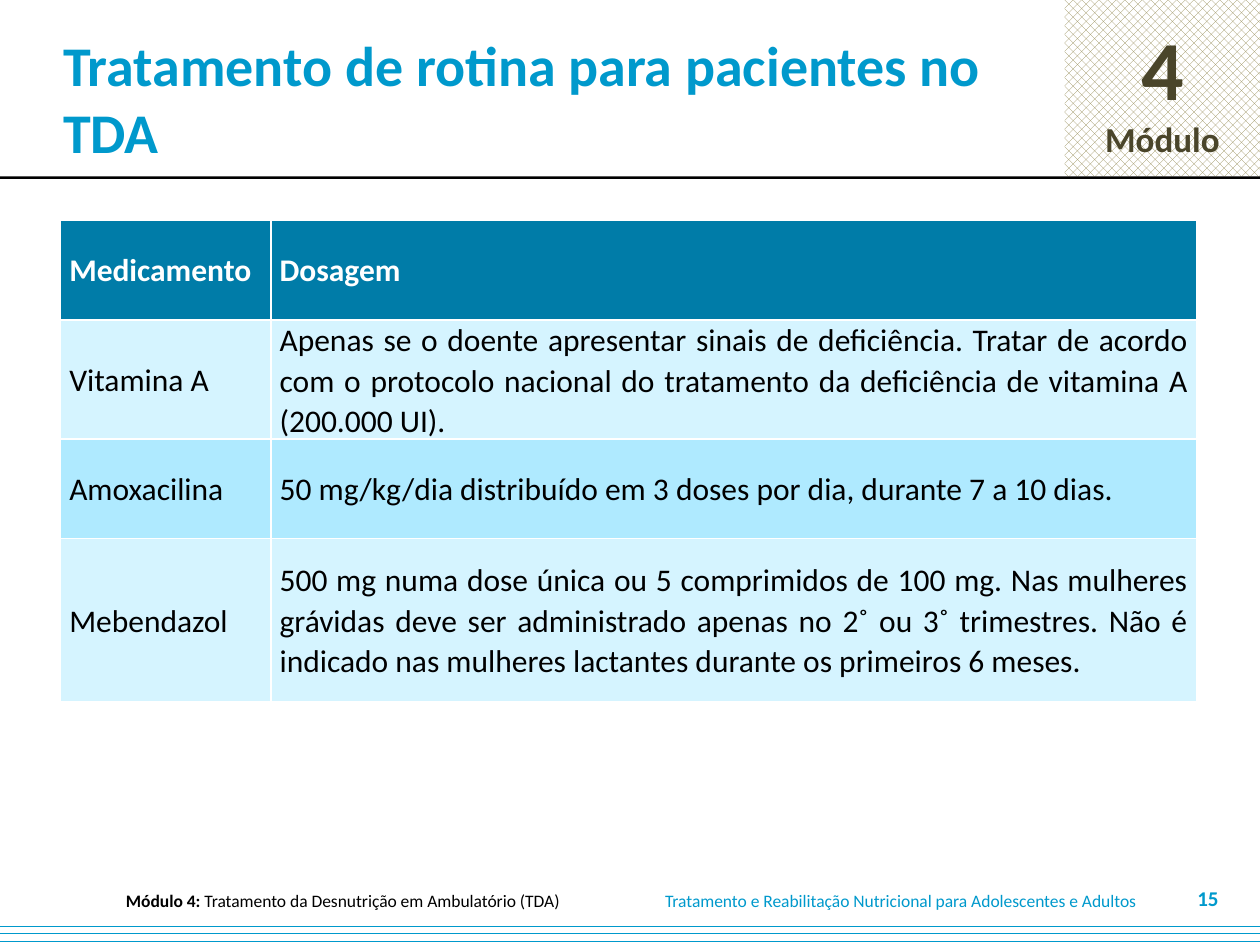
from lxml import etree
from pptx import Presentation
from pptx.dml.color import RGBColor
from pptx.enum.dml import MSO_PATTERN
from pptx.enum.shapes import MSO_SHAPE
from pptx.enum.text import MSO_ANCHOR, PP_ALIGN
from pptx.oxml.ns import qn
from pptx.util import Inches, Pt

RECT = MSO_SHAPE.RECTANGLE
DOTS, DASHES = MSO_PATTERN.PERCENT_50, MSO_PATTERN.DASHED_HORIZONTAL
MIDDLE = MSO_ANCHOR.MIDDLE
LEFT, CENTER, RIGHT, JUST = (PP_ALIGN.LEFT, PP_ALIGN.CENTER,
                             PP_ALIGN.RIGHT, PP_ALIGN.JUSTIFY)
WHITE = RGBColor(0xFF, 0xFF, 0xFF)
BLACK = RGBColor(0x00, 0x00, 0x00)
BLUE = RGBColor(0x00, 0x99, 0xCC)
DEEP = RGBColor(0x00, 0x7C, 0xA8)
PALE = RGBColor(0xD5, 0xF4, 0xFF)
LIGHT = RGBColor(0xAF, 0xEA, 0xFF)
KHAKI = RGBColor(0x94, 0x8A, 0x54)
OLIVE = RGBColor(0x4A, 0x45, 0x2A)
FONT = "Calibri"
WIDE, HIGH = Inches(10), Inches(7.5)

COLS = (16.7, 73.5)
ROWS = (10.53, 11.73, 10.53, 17.33)
DOSES = (
    ("Medicamento", "Dosagem"),
    ("Vitamina A",
     "Apenas se o doente apresentar sinais de deficiência. Tratar de acordo "
     "com o protocolo nacional do tratamento da deficiência de vitamina A "
     "(200.000 UI)."),
    ("Amoxacilina",
     "50 mg/kg/dia distribuído em 3 doses por dia, durante 7 a 10 dias."),
    ("Mebendazol",
     "500 mg numa dose única ou 5 comprimidos de 100 mg. Nas mulheres "
     "grávidas deve ser administrado apenas no 2˚ ou 3˚ trimestres. Não é "
     "indicado nas mulheres lactantes durante os primeiros 6 meses."),
)


def across(share):
    """Length from a percentage of the slide's width."""
    return int(WIDE * share / 100)


def down(share):
    """Length from a percentage of the slide's height."""
    return int(HIGH * share / 100)


def place(x, y, w, h):
    return across(x), down(y), across(w), down(h)


def style(para, size, color, bold=False, align=LEFT):
    para.alignment = align
    font = para.font
    font.name, font.size, font.bold = FONT, Pt(size), bold
    font.color.rgb = color


def add_band(slide, area, color, pattern=None):
    band = slide.shapes.add_shape(RECT, *place(*area))
    band.shadow.inherit = False
    band.line.fill.background()
    if pattern is None:
        band.fill.solid()
        band.fill.fore_color.rgb = color
    else:
        band.fill.patterned()
        band.fill.pattern = pattern
        band.fill.fore_color.rgb = color
        band.fill.back_color.rgb = WHITE
    return band


def add_badge(slide):
    frame = add_band(slide, (84.5, 0, 15.5, 18.67), KHAKI, DOTS).text_frame
    frame.vertical_anchor = MIDDLE
    number, label = frame.paragraphs[0], frame.add_paragraph()
    number.text, label.text = "4", "Módulo"
    style(number, 48, OLIVE, True, CENTER)
    style(label, 20, OLIVE, True, CENTER)


def add_label(slide, area, text, size, color, bold=False, align=LEFT, lead=""):
    """Add one line of text, with an optional bold lead."""
    frame = slide.shapes.add_textbox(*place(*area)).text_frame
    frame.word_wrap = True
    frame.vertical_anchor = MIDDLE
    para = frame.paragraphs[0]
    if lead:
        run = para.add_run()
        run.text, run.font.bold = lead, True
    para.add_run().text = text
    style(para, size, color, bold, align)
    return frame


def edge(cell):
    """Draw thin white borders round a cell."""
    props = cell._tc.get_or_add_tcPr()
    for side in ("a:lnL", "a:lnR", "a:lnT", "a:lnB"):
        line = etree.SubElement(props, qn(side), w=str(Pt(1)))
        fill = etree.SubElement(line, qn("a:solidFill"))
        etree.SubElement(fill, qn("a:srgbClr"), val=str(WHITE))


def fill_cell(cell, text, back, color, bold):
    edge(cell)
    cell.fill.solid()
    cell.fill.fore_color.rgb = back
    cell.vertical_anchor = MIDDLE
    cell.margin_left = cell.margin_right = Inches(0.07)
    cell.margin_top = cell.margin_bottom = 0
    cell.text = text
    para = cell.text_frame.paragraphs[0]
    para.line_spacing = 1.05
    style(para, 18, color, bold, JUST)


def add_doses(slide):
    area = place(4.8, 23.33, sum(COLS), sum(ROWS))
    table = slide.shapes.add_table(len(ROWS), len(COLS), *area).table
    for col, share in zip(table.columns, COLS):
        col.width = across(share)
    for i, (row, share) in enumerate(zip(table.rows, ROWS)):
        row.height = down(share)
        head = i == 0
        back = DEEP if head else PALE if i % 2 else LIGHT
        for cell, text in zip(row.cells, DOSES[i]):
            fill_cell(cell, text, back, WHITE if head else BLACK, head)


def main():
    deck = Presentation()
    deck.slide_width, deck.slide_height = WIDE, HIGH
    slide = deck.slides.add_slide(deck.slide_layouts[6])

    add_badge(slide)
    add_band(slide, (0, 18.67, 100, 0.27), BLACK)
    add_band(slide, (0, 97.2, 100, 2.8), BLUE, DASHES)
    title = add_label(slide, (0, 0, 85.8, 20.67),
                      "Tratamento de rotina para pacientes no TDA",
                      32, BLUE, True)
    title.margin_left = Inches(0.5)
    add_doses(slide)
    add_label(slide, (2.9, 94, 48.6, 2.67),
              "Tratamento da Desnutrição em Ambulatório (TDA)",
              10, BLACK, align=CENTER, lead="Módulo 4: ")
    add_label(slide, (51.8, 94, 40.5, 2.67),
              "Tratamento e Reabilitação Nutricional para Adolescentes e Adultos",
              10, BLUE)
    add_label(slide, (92.7, 93.33, 5, 3.33), "15", 12, BLUE, True, RIGHT)

    deck.save("out.pptx")


if __name__ == "__main__":
    main()
